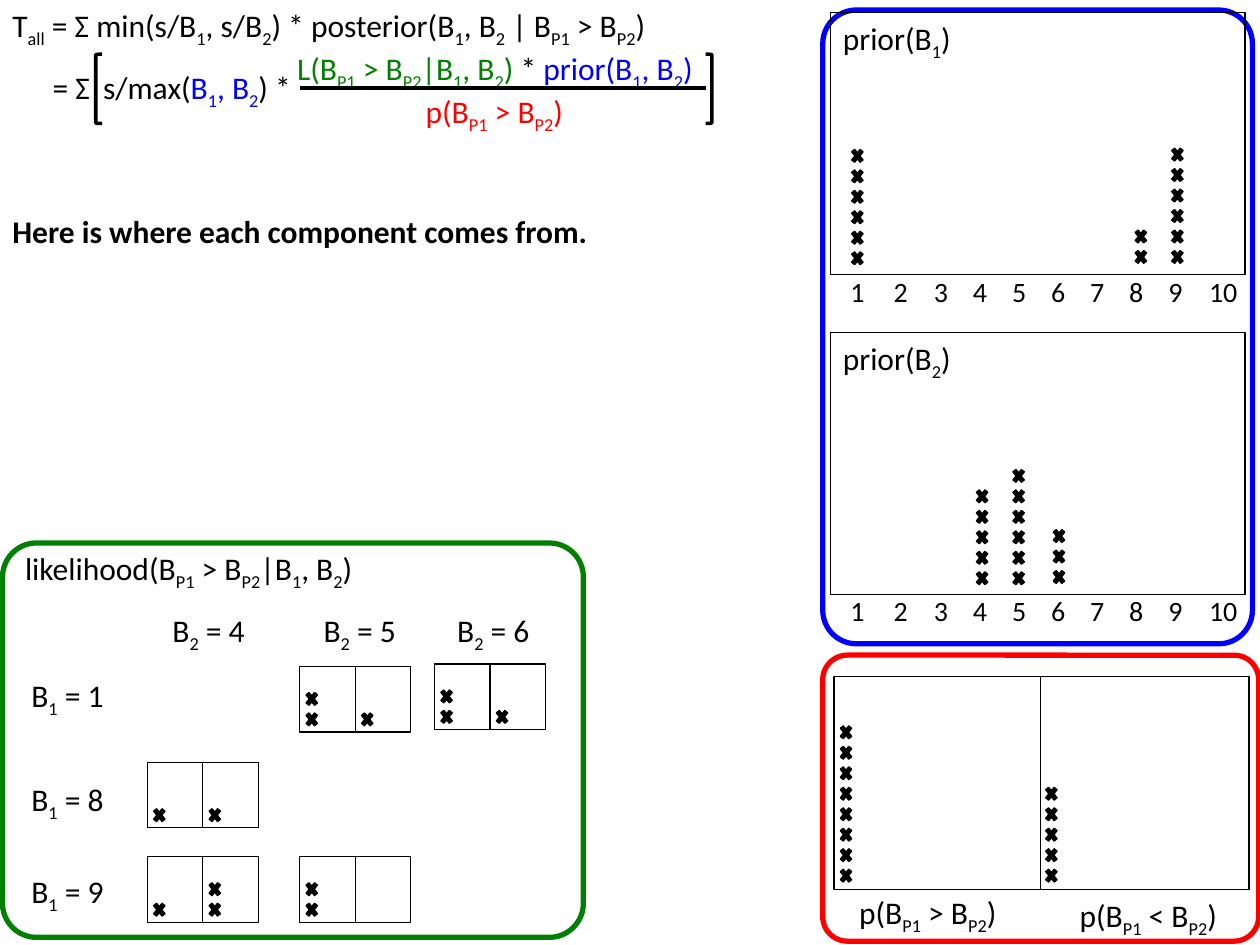
from dataclasses import dataclass

from lxml import etree
from pptx import Presentation
from pptx.dml.color import RGBColor
from pptx.enum import shapes, text
from pptx.oxml import ns
from pptx.util import Inches, Pt

SHAPE = shapes.MSO_SHAPE


@dataclass(frozen=True)
class Theme:
    font: str = "Calibri"
    black: str = "000000"
    white: str = "FFFFFF"
    likelihood: str = "008000"
    prior: str = "0000FF"
    evidence: str = "FF0000"
    body: float = 18
    axis: float = 16
    thin: float = 0.75
    rule: float = 2
    outline: float = 3


@dataclass(frozen=True)
class Panel:
    left: float
    top: float
    width: float
    height: float
    color: str
    corner: float


@dataclass(frozen=True)
class Stack:
    left: float
    bottom: float
    count: int


@dataclass(frozen=True)
class Prior:
    label: str
    top: float
    axis_top: float
    stacks: tuple[Stack, ...]


@dataclass(frozen=True)
class Outcome:
    left: float
    top: float
    greater: int
    less: int


@dataclass(frozen=True)
class Label:
    left: float
    top: float
    width: float
    words: str


THEME = Theme()
MARK_WIDTH, MARK_HEIGHT, MARK_PITCH = 0.13, 0.16, 0.16 + 0.0025
CELL_WIDTH, CELL_HEIGHT = 0.44, 0.52
AXIS_TABS = [0.4] + [0.72 + 0.31 * step for step in range(7)] + [2.96]

PANELS = (
    Panel(0.02, 4.31, 4.61, 3.13, THEME.likelihood, 0.086),
    Panel(6.53, 0.08, 3.41, 5.03, THEME.prior, 0.078),
    Panel(6.53, 5.2, 3.46, 2.27, THEME.evidence, 0.086),
)
PRIORS = (
    Prior("prior(B~1~)", 0.1, 2.13,
          (Stack(6.74, 1.97, 6), Stack(8.99, 1.96, 2), Stack(9.28, 1.96, 6))),
    Prior("prior(B~2~)", 2.64, 4.66,
          (Stack(7.73, 4.51, 5), Stack(8.02, 4.51, 6), Stack(8.34, 4.5, 3))),
)
EVIDENCE = (Stack(6.65, 6.87, 8), Stack(8.28, 6.87, 5))
OUTCOMES = (
    Outcome(2.38, 5.29, 2, 1),
    Outcome(3.45, 5.27, 2, 1),
    Outcome(1.17, 6.05, 1, 1),
    Outcome(1.17, 6.8, 1, 2),
    Outcome(2.38, 6.8, 2, 0),
)
ROWS = ((1, 5.32), (8, 6.14), (9, 6.87))
COLUMNS = ((4, 1.27), (5, 2.47), (6, 3.53))
LABELS = (
    Label(0.1, 4.31, 2.89, "likelihood(B~P1~ > B~P2~|B~1~, B~2~)"),
    Label(6.72, 7.04, 1.35, "p(B~P1~ > B~P2~)"),
    Label(8.47, 7.06, 1.35, "p(B~P1~ < B~P2~)"),
    *(Label(0.15, top, 0.79, f"B~1~ = {value}") for value, top in ROWS),
    *(Label(left, 4.8, 0.79, f"B~2~ = {value}") for value, left in COLUMNS),
)


def add_figure(page, kind, left, top, width, height, *, line=THEME.black,
               weight=THEME.thin, fill=None, corner=None):
    box = page.shapes.add_shape(kind, Inches(left), Inches(top), Inches(width), Inches(height))
    box.shadow.inherit = False
    if fill:
        box.fill.solid()
        box.fill.fore_color.rgb = RGBColor.from_string(fill)
    else:
        box.fill.background()
    box.line.color.rgb = RGBColor.from_string(line)
    box.line.width = Pt(weight)
    if corner is not None:
        box.adjustments[0] = corner
    return box


def add_span(para, words: str, *, color=THEME.black, size=THEME.body, bold=False) -> None:
    for index, piece in enumerate(words.split("~")):
        if not piece:
            continue
        span = para.add_run()
        span.text = piece
        span.font.name = THEME.font
        span.font.size = Pt(size)
        span.font.bold = bold
        span.font.color.rgb = RGBColor.from_string(color)
        if index % 2:
            span.font._element.set("baseline", "-25000")


def format_para(para, *, indent=0.0, before=0.0, tabs=(), tab_align="l") -> None:
    para.alignment = text.PP_ALIGN.LEFT
    properties = para._p.get_or_add_pPr()
    if indent:
        properties.set("marL", str(Inches(indent)))
        properties.set("indent", "0")
    if tabs:
        stops = etree.SubElement(properties, ns.qn("a:tabLst"))
        for position in tabs:
            etree.SubElement(stops, ns.qn("a:tab"), pos=str(Inches(position)), algn=tab_align)
    if before:
        para.space_before = Pt(before)


def add_label(page, left, top, width, spans, *, height=0.4, size=THEME.body,
              tabs=(), tab_align="l") -> None:
    box = page.shapes.add_textbox(Inches(left), Inches(top), Inches(width), Inches(height))
    box.text_frame.word_wrap = False
    para = box.text_frame.paragraphs[0]
    format_para(para, tabs=tabs, tab_align=tab_align)
    for words, color in spans:
        add_span(para, words, color=color, size=size)


def add_stack(page, stack: Stack) -> None:
    for level in range(stack.count):
        add_figure(page, SHAPE.MATH_MULTIPLY, stack.left, stack.bottom - level * MARK_PITCH,
                   MARK_WIDTH, MARK_HEIGHT, fill=THEME.black)


def add_formula(page) -> None:
    box = add_figure(page, SHAPE.RECTANGLE, 0, 0, 6.41, 4.34, line=THEME.white, fill=THEME.white)
    frame = box.text_frame
    frame.word_wrap = True
    frame.vertical_anchor = text.MSO_ANCHOR.TOP
    lines = (
        (0, 0, False, (("T~all~ = Σ min(s/B~1~, s/B~2~) * posterior(B~1~, B~2~ | B~P1~ > B~P2~)",
                        THEME.black),)),
        (2.26, 0, False, (("L(B~P1~ > B~P2~|B~1~, B~2~)", THEME.likelihood),
                          (" * ", THEME.black), ("prior(B~1~, B~2~)", THEME.prior))),
        (3.28, 0, False, (("p(B~P1~ > B~P2~)", THEME.evidence),)),
        (0, 44, True, (("Here is where each component comes from.", THEME.black),)),
    )
    for index, (indent, before, bold, spans) in enumerate(lines):
        para = frame.add_paragraph() if index else frame.paragraphs[0]
        format_para(para, indent=indent, before=before)
        for words, color in spans:
            add_span(para, words, color=color, bold=bold)
    add_label(page, 0.32, 0.49, 2.14, (("= Σ\ts/max(", THEME.black), ("B~1~, B~2~", THEME.prior),
                                       (") *", THEME.black)), tabs=(0.4,))
    for kind, left in ((SHAPE.LEFT_BRACKET, 0.76), (SHAPE.RIGHT_BRACKET, 5.6)):
        add_figure(page, kind, left, 0.43, 0.05, 0.55, weight=THEME.rule)
    bar = page.shapes.add_connector(shapes.MSO_CONNECTOR.STRAIGHT,
                                    Inches(2.38), Inches(0.7), Inches(5.6), Inches(0.7))
    bar.line.color.rgb = RGBColor.from_string(THEME.black)
    bar.line.width = Pt(THEME.rule)
    etree.SubElement(bar._element.spPr, ns.qn("a:effectLst"))


def add_prior(page, prior: Prior) -> None:
    add_figure(page, SHAPE.RECTANGLE, 6.59, prior.top, 3.29, 2.08)
    axis = "\t".join(str(value) for value in range(1, 11))
    add_label(page, 6.65, prior.axis_top, 3.3, ((axis, THEME.black),), height=0.37,
              size=THEME.axis, tabs=AXIS_TABS, tab_align="ctr")
    add_label(page, 6.59, prior.top, 1.08, ((prior.label, THEME.black),))
    for stack in prior.stacks:
        add_stack(page, stack)


def add_outcome(page, outcome: Outcome) -> None:
    for index, count in enumerate((outcome.greater, outcome.less)):
        left = outcome.left + index * CELL_WIDTH
        add_figure(page, SHAPE.RECTANGLE, left, outcome.top, CELL_WIDTH, CELL_HEIGHT)
        add_stack(page, Stack(left + 0.03, outcome.top + 0.34, count))


def main() -> None:
    deck = Presentation()
    deck.slide_width, deck.slide_height = Inches(10), Inches(7.5)
    page = deck.slides.add_slide(deck.slide_layouts.get_by_name("Blank"))
    add_formula(page)
    for panel in PANELS:
        add_figure(page, SHAPE.ROUNDED_RECTANGLE, panel.left, panel.top, panel.width,
                   panel.height, line=panel.color, weight=THEME.outline, corner=panel.corner)
    for prior in PRIORS:
        add_prior(page, prior)
    for left, width in ((6.62, 3.29), (8.26, 1.66)):
        add_figure(page, SHAPE.RECTANGLE, left, 5.37, width, 1.69)
    for stack in EVIDENCE:
        add_stack(page, stack)
    for outcome in OUTCOMES:
        add_outcome(page, outcome)
    for label in LABELS:
        add_label(page, label.left, label.top, label.width, ((label.words, THEME.black),))
    deck.save("out.pptx")


if __name__ == "__main__":
    main()
